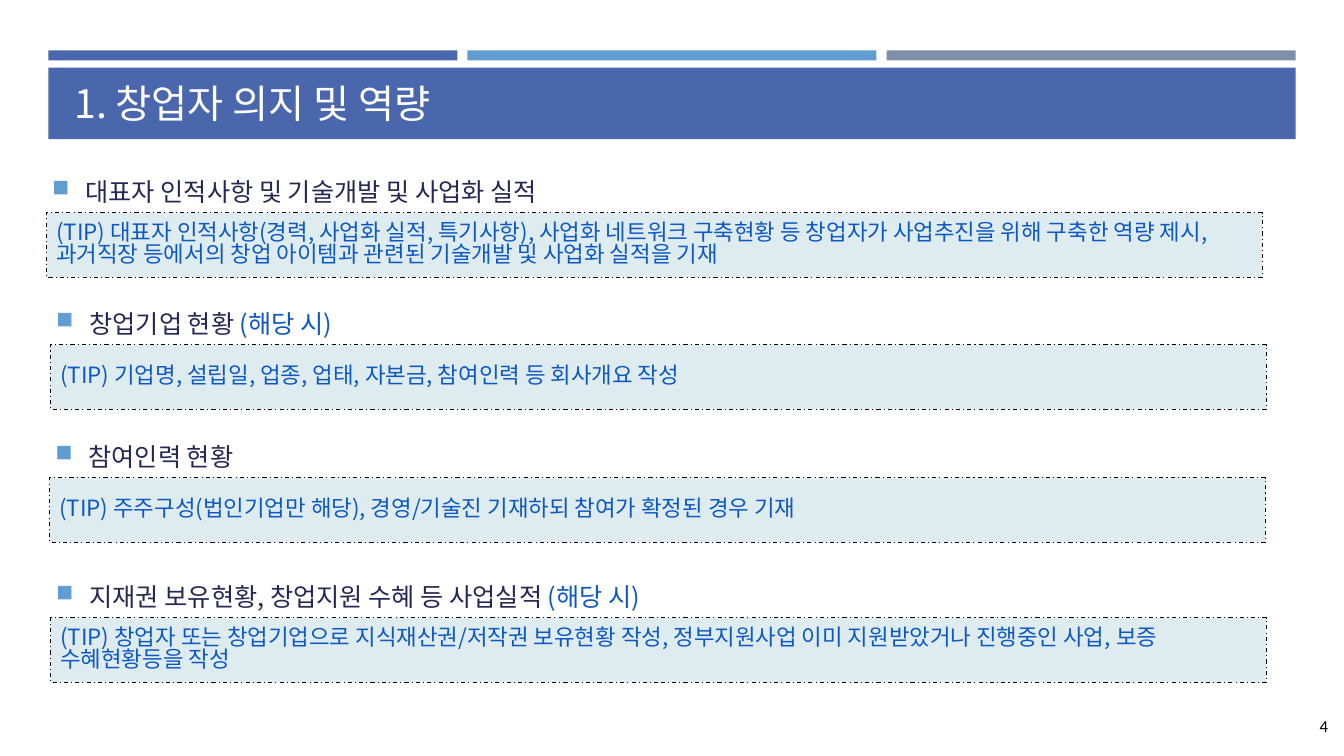
from lxml import etree
from pptx import Presentation
from pptx.dml.color import RGBColor
from pptx.enum.dml import MSO_LINE
from pptx.enum.shapes import MSO_SHAPE
from pptx.enum.text import MSO_ANCHOR, PP_ALIGN
from pptx.oxml.ns import qn
from pptx.util import Inches, Pt

RECT = MSO_SHAPE.RECTANGLE
MIDDLE = MSO_ANCHOR.MIDDLE
LEFT, RIGHT = PP_ALIGN.LEFT, PP_ALIGN.RIGHT
DASH_DOT = MSO_LINE.DASH_DOT

KOREAN, LATIN = "Noto Sans CJK KR", "Calibri"
NAVY, BLUE, SKY, GRAY = "242852", "4A66AC", "629DD1", "7F8FA9"
TIP_FILL, TIP_TEXT, WHITE, BLACK = "DEECEF", "0E58C4", "FFFFFF", "000000"

SLIDE_W, SLIDE_H = 13.33, 7.5
SECTION_W = 12.06
HEADING_H, TIP_H = 0.51, 0.64
TIP_DX, TIP_DY = 0.04, 0.47  # tip box relative to its heading
HANGING = 0.33

# Left, top, heading, condition, tip
SECTIONS = [
    (0.42, 1.64, "대표자 인적사항 및 기술개발 및 사업화 실적", "",
     "(TIP) 대표자 인적사항(경력, 사업화 실적, 특기사항), 사업화 네트워크 구축현황 등 "
     "창업자가 사업추진을 위해 구축한 역량 제시, 과거직장 등에서의 창업 아이템과 관련된 "
     "기술개발 및 사업화 실적을 기재"),
    (0.46, 2.95, "창업기업 현황 ", "(해당 시)",
     "(TIP) 기업명, 설립일, 업종, 업태, 자본금, 참여인력 등 회사개요 작성"),
    (0.45, 4.27, "참여인력 현황", "",
     "(TIP) 주주구성(법인기업만 해당), 경영/기술진 기재하되 참여가 확정된 경우 기재"),
    (0.46, 5.66, "지재권 보유현황, 창업지원 수혜 등 사업실적 ", "(해당 시)",
     "(TIP) 창업자 또는 창업기업으로 지식재산권/저작권 보유현황 작성, 정부지원사업 이미 "
     "지원받았거나 진행중인 사업, 보증 수혜현황등을 작성"),
]


def color(hex_code):
    return RGBColor.from_string(hex_code)


def add_rect(slide, box, fill, border=None):
    rect = slide.shapes.add_shape(RECT, *map(Inches, box))
    rect.shadow.inherit = False
    rect.fill.solid()
    rect.fill.fore_color.rgb = color(fill)
    if border:
        rect.line.color.rgb = color(border)
        rect.line.width = Pt(0.75)
        rect.line.dash_style = DASH_DOT
    else:
        rect.line.fill.background()
    return rect


def add_text_box(slide, box):
    return slide.shapes.add_textbox(*map(Inches, box))


def write(holder, *runs, size, font=KOREAN, align=LEFT, before=0, after=0, spacing=None):
    """Write (text, colour) runs as one paragraph."""
    frame = holder.text_frame
    frame.word_wrap = True
    frame.vertical_anchor = MIDDLE
    paragraph = frame.paragraphs[0]
    paragraph.alignment = align
    paragraph.space_before, paragraph.space_after = Pt(before), Pt(after)
    if spacing:
        paragraph.line_spacing = spacing
    for text, hex_code in runs:
        run = paragraph.add_run()
        run.text = text
        run.font.size = Pt(size)
        run.font.name = font
        run.font.color.rgb = color(hex_code)
        east_asian = etree.SubElement(run.font._element, qn("a:ea"))
        east_asian.set("typeface", font)
    return paragraph


def add_bullet(paragraph, hex_code):
    props = paragraph._p.get_or_add_pPr()
    props.set("marL", str(Inches(HANGING)))
    props.set("indent", str(-Inches(HANGING)))
    bullet_color = etree.SubElement(props, qn("a:buClr"))
    etree.SubElement(bullet_color, qn("a:srgbClr")).set("val", hex_code)
    etree.SubElement(props, qn("a:buSzPct")).set("val", "92000")
    etree.SubElement(props, qn("a:buChar")).set("char", "■")


def add_header(slide, left, top, width, title):
    # Three accent bars
    gap = 0.1
    bar_w = (width - 2 * gap) / 3
    for column, fill in enumerate((BLUE, SKY, GRAY)):
        add_rect(slide, (left + column * (bar_w + gap), top, bar_w, 0.1), fill)
    # Title band
    add_rect(slide, (left, top + 0.17, width, 0.71), BLUE)
    title_box = add_text_box(slide, (left + 0.16, top + 0.22, SECTION_W, 0.6))
    write(title_box, (title, WHITE), size=28)


def add_section(slide, left, top, heading, condition, tip):
    heading_box = add_text_box(slide, (left, top, SECTION_W, HEADING_H))
    runs = [(heading, NAVY)] + ([(condition, TIP_TEXT)] if condition else [])
    add_bullet(write(heading_box, *runs, size=18, before=3.6, after=6), SKY)

    tip_box = add_rect(slide, (left + TIP_DX, top + TIP_DY, SECTION_W, TIP_H),
                       TIP_FILL, border=BLACK)
    write(tip_box, (tip, TIP_TEXT), size=16, before=3.2, after=6, spacing=0.83)


def add_page_number(slide, right, bottom, number):
    width, height = 1.15, 0.4
    number_box = add_text_box(slide, (right - width, bottom - height, width, height))
    write(number_box, (number, BLACK), size=12, font=LATIN, align=RIGHT)


def main():
    prs = Presentation()
    prs.slide_width, prs.slide_height = Inches(SLIDE_W), Inches(SLIDE_H)
    slide = prs.slides.add_slide(prs.slide_layouts[6])
    add_header(slide, 0.48, 0.5, 12.37, "1. 창업자 의지 및 역량")
    for section in SECTIONS:
        add_section(slide, *section)
    add_page_number(slide, SLIDE_W - 0.06, SLIDE_H - 0.1, "4")
    prs.save("out.pptx")


if __name__ == "__main__":
    main()
